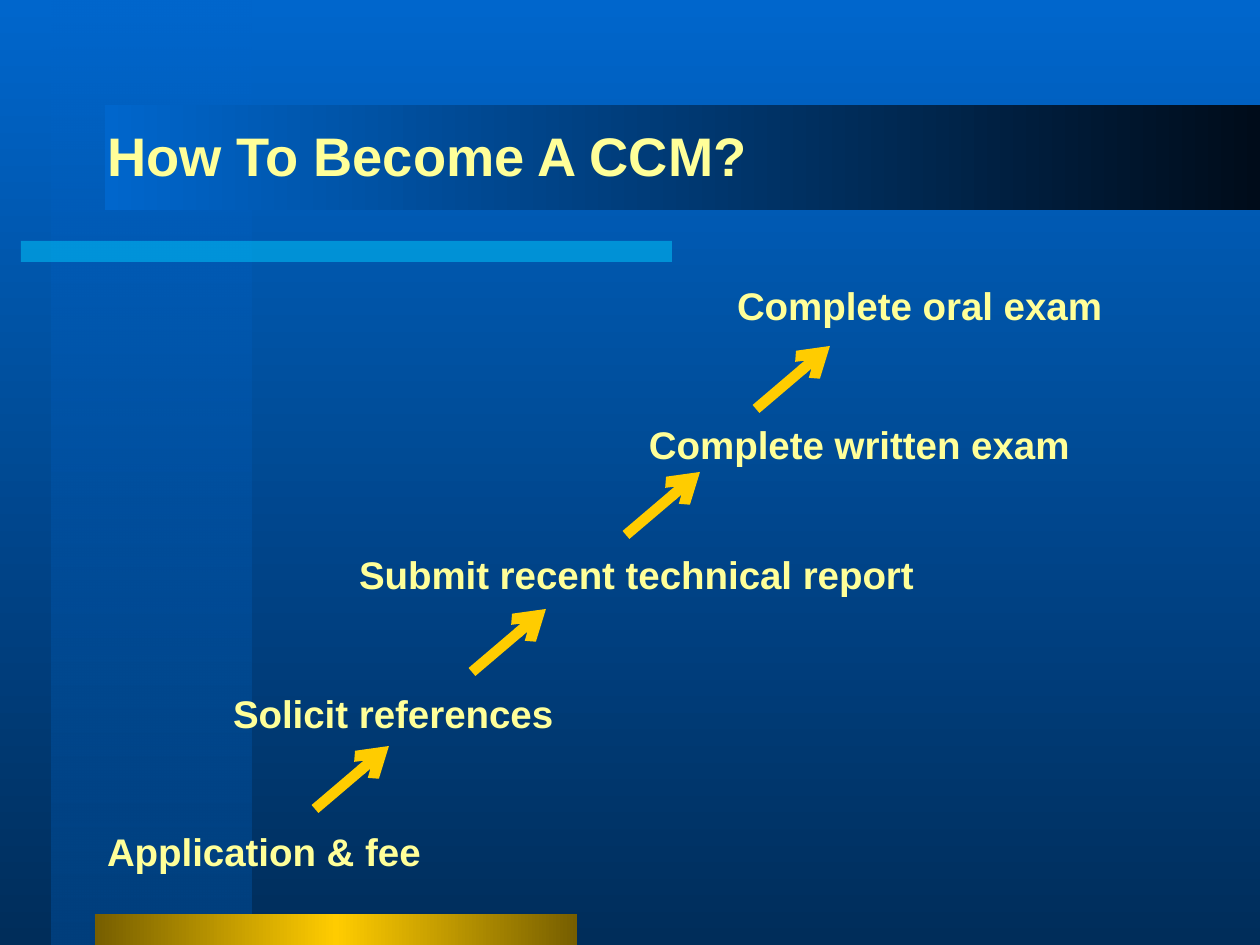
from dataclasses import dataclass

from lxml.etree import SubElement
from pptx import Presentation
from pptx.dml.color import RGBColor as RGB
from pptx.enum.shapes import MSO_CONNECTOR as Line, MSO_SHAPE as Shape
from pptx.enum.text import MSO_ANCHOR as Anchor
from pptx.oxml.ns import qn
from pptx.util import Pt

WIDE, HIGH = 1260, 945
SCALE = 914400 / 126


@dataclass(frozen=True)
class Theme:
    font: str = "Arial"
    text: str = "FFFF99"
    gold: str = "FFCC00"
    dim: str = "765E00"
    blue: str = "0066CC"
    navy: str = "002D5A"
    dark: str = "000C1A"
    side: str = "003F7D"
    cyan: str = "00CCFF"
    head: int = 31
    body: int = 22
    rule: int = 6


THEME = Theme()

# Each step: text, left and top.
STEPS = [
    ("Application & fee", 107, 829),
    ("Solicit references", 233, 691),
    ("Submit recent technical report", 359, 552),
    ("Complete written exam", 649, 422),
    ("Complete oral exam", 737, 283),
]
# Tail end of the arrow from each step to the next.
TAILS = [(315, 809), (472, 672), (626, 535), (756, 409)]
RISE = (74, -63)


def px(*nums):
    return [round(n * SCALE) for n in nums]


def fade(fill, root, stops, angle):
    """Fill with a gradient; a stop is (percent, colour, opacity percent)."""
    fill.gradient()
    fill.gradient_angle = angle
    rows = next(root.iter(qn("a:gsLst")))
    rows.clear()
    for pos, color, alpha in stops:
        stop = SubElement(rows, qn("a:gs"), pos=str(pos * 1000))
        tint = SubElement(stop, qn("a:srgbClr"), val=color)
        if alpha < 100:
            SubElement(tint, qn("a:alpha"), val=str(alpha * 1000))


def add_bar(slide, box, stops, angle=0):
    bar = slide.shapes.add_shape(Shape.RECTANGLE, *px(*box))
    bar.shadow.inherit = False
    bar.line.fill.background()
    fade(bar.fill, bar._element.spPr, stops, angle)


def add_text(slide, box, words, size):
    area = slide.shapes.add_textbox(*px(*box))
    frame = area.text_frame
    frame.word_wrap = True
    frame.vertical_anchor = Anchor.MIDDLE
    frame.margin_left = frame.margin_right = 0
    frame.margin_top = frame.margin_bottom = 0
    run = frame.paragraphs[0].add_run()
    run.text = words
    font = run.font
    font.name, font.size, font.bold = THEME.font, Pt(size), True
    font.color.rgb = RGB.from_string(THEME.text)


def add_arrow(slide, left, top):
    run, rise = RISE
    arrow = slide.shapes.add_connector(
        Line.STRAIGHT, *px(left, top, left + run, top + rise))
    arrow.line.color.rgb = RGB.from_string(THEME.gold)
    arrow.line.width = Pt(THEME.rule)
    SubElement(arrow.line._get_or_add_ln(), qn("a:tailEnd"), type="arrow")
    SubElement(arrow._element.spPr, qn("a:effectLst"))


def add_decor(slide, box):
    left, top, wide, high = box
    t = THEME
    fade(slide.background.fill, slide._element,
         [(0, t.blue, 100), (100, t.navy, 100)], 270)
    add_bar(slide, (left + 52, top, 200, high),
            [(0, t.blue, 50), (100, t.side, 100)], 270)
    add_bar(slide, (left + 21, top + 241, 651, 21),
            [(0, t.cyan, 50), (100, t.cyan, 50)])
    add_bar(slide, (left + 95, top + high - 31, 482, 31),
            [(0, t.dim, 100), (50, t.gold, 100), (100, t.dim, 100)])


def add_head(slide, box, words):
    left, top, wide, high = box
    add_bar(slide, box, [(0, THEME.blue, 100), (100, THEME.dark, 100)])
    add_text(slide, (left + 2, top + 19, wide - 100, 62), words, THEME.head)


def add_steps(slide, box):
    left, top, wide, high = box
    for words, x, y in STEPS:
        add_text(slide, (left + x, top + y, 600 if x < 600 else wide - x, 44),
                 words, THEME.body)
    for x, y in TAILS:
        add_arrow(slide, left + x, top + y)


def main():
    deck = Presentation()
    deck.slide_width, deck.slide_height = px(WIDE, HIGH)
    slide = deck.slides.add_slide(deck.slide_layouts[6])
    page = (0, 0, WIDE, HIGH)
    add_decor(slide, page)
    add_head(slide, (105, 105, WIDE - 105, 105), "How To Become A CCM?")
    add_steps(slide, page)
    deck.save("out.pptx")


if __name__ == "__main__":
    main()
